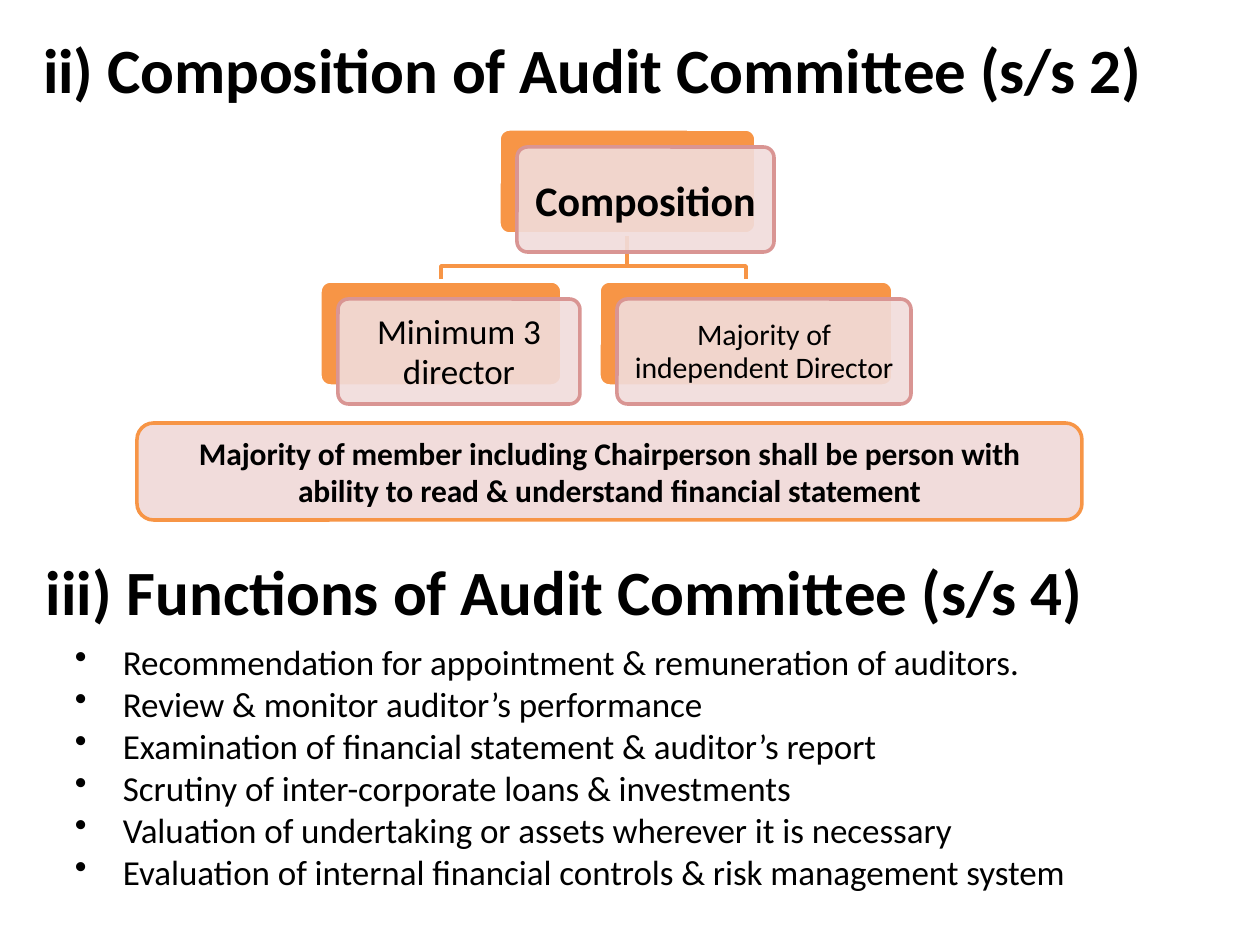
from dataclasses import dataclass
from typing import Optional

import pptx
import pptx.dml.color
import pptx.enum.shapes
import pptx.enum.text
import pptx.oxml.ns
import pptx.util
from lxml import etree

EMU_PER_PX = 914400 / 126
CARD_OFFSET = 18
ALIGN = pptx.enum.text.PP_ALIGN
ANCHOR = pptx.enum.text.MSO_ANCHOR


@dataclass(frozen=True)
class Theme:
    font: str = "Calibri"
    ink: str = "000000"
    white: str = "FFFFFF"
    orange: str = "F79546"
    pink: str = "F1DCDB"
    rose: str = "D99593"
    heading_pt: int = 36
    root_pt: int = 24
    body_pt: int = 20
    banner_pt: int = 18
    small_pt: int = 17
    line_pt: float = 2.04


THEME = Theme()


@dataclass(frozen=True)
class Box:
    left: int
    top: int
    width: int
    height: int

    @property
    def middle(self) -> int:
        return self.left + self.width // 2

    @property
    def bottom(self) -> int:
        return self.top + self.height

    def shifted(self, offset: int) -> "Box":
        return Box(self.left + offset, self.top + offset, self.width, self.height)

    def emu(self) -> tuple:
        return tuple(px(n) for n in (self.left, self.top, self.width, self.height))


@dataclass(frozen=True)
class Node:
    label: str
    plate: Box
    size: int
    bold: bool = False
    leading: Optional[float] = None


ROOT = Node("Composition", Box(499, 129, 257, 105), THEME.root_pt, bold=True)
MEMBERS = (
    Node("Minimum 3\vdirector", Box(320, 281, 242, 105), THEME.body_pt, leading=23.1),
    Node("Majority of\vindependent Director", Box(599, 281, 294, 105),
         THEME.small_pt, leading=18.6),
)
BRANCH_Y = 266
TITLE_BOX = Box(43, 29, 1108, 79)
BANNER_BOX = Box(137, 423, 945, 97)
FUNCTIONS_BOX = Box(45, 530, 1043, 364)
BANNER = ("Majority of member including Chairperson shall be person with\v"
          "ability to read & understand financial statement")
FUNCTIONS = (
    "Recommendation for appointment & remuneration of auditors.",
    "Review & monitor auditor’s performance",
    "Examination of financial statement & auditor’s report",
    "Scrutiny of inter-corporate loans & investments",
    "Valuation of undertaking or assets wherever it is necessary",
    "Evaluation of internal financial controls & risk management system",
)


def px(count: float) -> int:
    return round(count * EMU_PER_PX)


def rgb(code: str) -> pptx.dml.color.RGBColor:
    return pptx.dml.color.RGBColor.from_string(code)


def prepare_frame(shape, anchor, top_inset: int = 0):
    frame = shape.text_frame
    frame.word_wrap = True
    frame.auto_size = pptx.enum.text.MSO_AUTO_SIZE.NONE
    frame.vertical_anchor = anchor
    frame.margin_left = frame.margin_right = frame.margin_bottom = 0
    frame.margin_top = px(top_inset)
    return frame


def write(paragraph, text: str, *, size: int, bold: bool = False, align=ALIGN.LEFT,
          leading: Optional[float] = None, before: float = 0,
          tracking: float = -0.06) -> None:
    """Fill a paragraph; a vertical tab in the text breaks the line."""
    paragraph.text = text
    paragraph.alignment = align
    paragraph.space_before = pptx.util.Pt(before)
    if leading:
        paragraph.line_spacing = pptx.util.Pt(leading)
    for run in paragraph.runs:
        run.font.name = THEME.font
        run.font.size = pptx.util.Pt(size)
        run.font.bold = bold
        run.font.color.rgb = rgb(THEME.ink)
        run._r.get_or_add_rPr().set("spc", str(round(tracking * 100)))


def add_marker(paragraph, tag: str, hang: int, indent: int, **attributes: str) -> None:
    """Give a paragraph a hanging bullet or automatic number."""
    properties = paragraph._p.get_or_add_pPr()
    properties.set("marL", str(px(indent)))
    properties.set("indent", str(-px(hang)))
    etree.SubElement(properties, pptx.oxml.ns.qn(tag), attributes)


def add_rounded(slide, box: Box, fill: str, line: str, corner: float,
                opacity: int = 100):
    shape = slide.shapes.add_shape(
        pptx.enum.shapes.MSO_SHAPE.ROUNDED_RECTANGLE, *box.emu())
    shape.adjustments[0] = corner
    shape.shadow.inherit = False
    shape.fill.solid()
    shape.fill.fore_color.rgb = rgb(fill)
    if opacity < 100:
        color = shape._element.spPr.find(".//" + pptx.oxml.ns.qn("a:srgbClr"))
        etree.SubElement(color, pptx.oxml.ns.qn("a:alpha"), val=str(opacity * 1000))
    shape.line.color.rgb = rgb(line)
    shape.line.width = pptx.util.Pt(THEME.line_pt)
    return shape


def add_branch(slide, parent: Box, child: Box) -> None:
    builder = slide.shapes.build_freeform(parent.middle, parent.bottom, EMU_PER_PX)
    builder.add_line_segments(
        [(parent.middle, BRANCH_Y), (child.middle, BRANCH_Y), (child.middle, child.top)],
        close=False)
    branch = builder.convert_to_shape()
    branch.shadow.inherit = False
    branch.fill.background()
    branch.line.color.rgb = rgb(THEME.orange)
    branch.line.width = pptx.util.Pt(THEME.line_pt)


def add_node(slide, node: Node) -> None:
    """Draw an orange plate with a translucent labelled card over it."""
    add_rounded(slide, node.plate, THEME.orange, THEME.white, 0.1)
    card = add_rounded(slide, node.plate.shifted(CARD_OFFSET), THEME.pink, THEME.rose,
                       0.1, opacity=90)
    frame = prepare_frame(card, ANCHOR.MIDDLE)
    write(frame.paragraphs[0], node.label, size=node.size, bold=node.bold,
          align=ALIGN.CENTER, leading=node.leading)


def add_functions(slide) -> None:
    section = slide.shapes.add_textbox(*FUNCTIONS_BOX.emu())
    frame = prepare_frame(section, ANCHOR.TOP, top_inset=23)
    heading = frame.paragraphs[0]
    write(heading, "Functions of Audit Committee (s/s 4)", size=THEME.heading_pt,
          bold=True)
    add_marker(heading, "a:buAutoNum", 81, 82, type="romanLcParenR", startAt="3")
    for index, function in enumerate(FUNCTIONS):
        item = frame.add_paragraph()
        item.level = 1
        write(item, function, size=THEME.body_pt, before=0 if index else 6.7)
        add_marker(item, "a:buChar", 48, 78, char="•")


def main() -> None:
    deck = pptx.Presentation()
    deck.slide_width, deck.slide_height = px(1260), px(945)
    slide = deck.slides.add_slide(deck.slide_layouts.get_by_name("Title Only"))

    title = slide.shapes.title
    title.left, title.top, title.width, title.height = TITLE_BOX.emu()
    write(prepare_frame(title, ANCHOR.TOP, top_inset=1).paragraphs[0],
          "ii) Composition of Audit Committee (s/s 2)", size=THEME.heading_pt, bold=True)

    for member in reversed(MEMBERS):
        add_branch(slide, ROOT.plate, member.plate)
    for node in (ROOT, *MEMBERS):
        add_node(slide, node)

    banner = add_rounded(slide, BANNER_BOX, THEME.pink, THEME.orange, 0.17)
    write(prepare_frame(banner, ANCHOR.MIDDLE).paragraphs[0], BANNER,
          size=THEME.banner_pt, bold=True, align=ALIGN.CENTER)
    add_functions(slide)
    deck.save("out.pptx")


if __name__ == "__main__":
    main()
